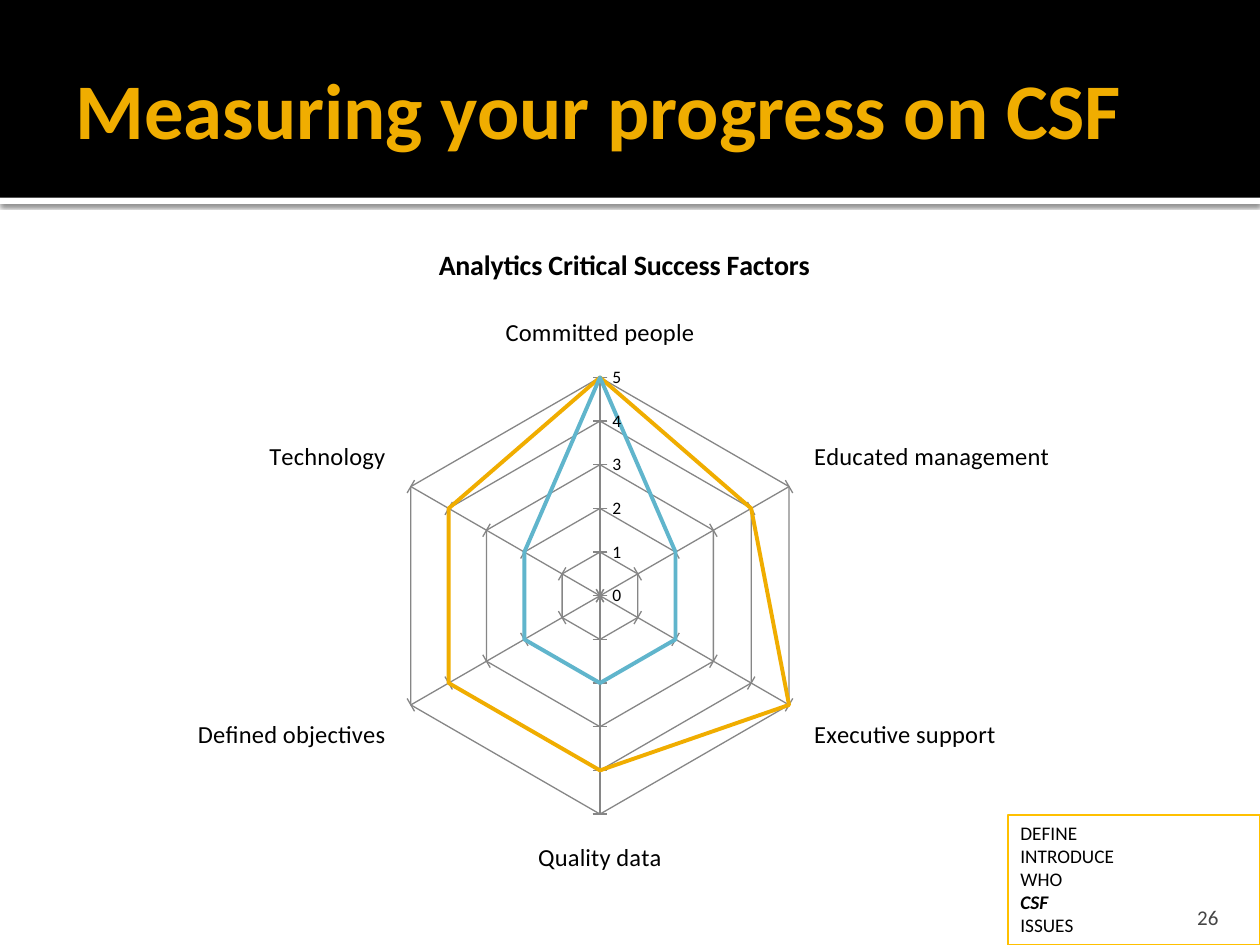
import pptx
import pptx.chart.data
import pptx.dml.color
import pptx.enum.chart
import pptx.enum.shapes
import pptx.enum.text
import pptx.oxml
import pptx.util

Pt = pptx.util.Pt
NS = 'xmlns:a="http://schemas.openxmlformats.org/drawingml/2006/main"'
NS_C = 'xmlns:c="http://schemas.openxmlformats.org/drawingml/2006/chart"'
FONT = "Calibri"
GOLD, BLUE, GREY = "F0AD00", "60B5CC", "868686"

TITLE = "Measuring your progress on CSF"
HEADING = "Analytics Critical Success Factors"
FACTORS = ["Committed people", "Educated management", "Executive support",
           "Quality data", "Defined objectives", "Technology"]
SERIES = [("Series 1", [5, 4, 5, 4, 4, 4], GOLD),
          ("Series 2", [5, 2, 2, 2, 2, 2], BLUE)]
STEPS = ["DEFINE", "INTRODUCE", "WHO", "CSF", "ISSUES"]
CURRENT = "CSF"
PAGE = "26"
PLOT = {"x": 0.25, "y": 0.23, "w": 0.45, "h": 0.64}


def color(code):
    return pptx.dml.color.RGBColor.from_string(code)


def style(font, size, code="000000", bold=False, italic=False):
    font.name, font.size = FONT, Pt(size)
    font.bold, font.italic = bold, italic
    font.color.rgb = color(code)


def place(box):
    return [Pt(v) for v in box]


def rect(slide, box, fill=None, line=None):
    shape = slide.shapes.add_shape(
        pptx.enum.shapes.MSO_SHAPE.RECTANGLE, *place(box))
    shape.shadow.inherit = False
    if fill:
        shape.fill.solid()
        shape.fill.fore_color.rgb = color(fill)
    else:
        shape.fill.background()
    if line:
        shape.line.color.rgb = color(line)
        shape.line.width = Pt(0.75)
    else:
        shape.line.fill.background()
    return shape


def write(shape, lines, anchor, align, insets):
    """Fill a shape with one paragraph per (text, style options) pair."""
    frame = shape.text_frame
    frame.word_wrap = True
    frame.vertical_anchor = anchor
    (frame.margin_left, frame.margin_top,
     frame.margin_right, frame.margin_bottom) = place(insets)
    for i, (text, look) in enumerate(lines):
        para = frame.add_paragraph() if i else frame.paragraphs[0]
        para.alignment = align
        run = para.add_run()
        run.text = text
        style(run.font, **look)


def cast(shape):
    """Give the shape a soft shadow straight below it."""
    effects = shape._element.spPr.find(pptx.oxml.ns.qn("a:effectLst"))
    effects.append(pptx.oxml.parse_xml(
        f'<a:outerShdw {NS} blurRad="{Pt(2.5)}" dist="{Pt(0.8)}" dir="5400000"'
        ' algn="tl" rotWithShape="0"><a:srgbClr val="000000">'
        '<a:alpha val="60000"/></a:srgbClr></a:outerShdw>'))


def radar(slide, box):
    data = pptx.chart.data.CategoryChartData()
    data.categories = FACTORS
    for name, values, _ in SERIES:
        data.add_series(name, values)
    chart = slide.shapes.add_chart(
        pptx.enum.chart.XL_CHART_TYPE.RADAR, *place(box), data).chart
    style(chart.font, 10)
    chart.has_legend = False
    chart.has_title = True
    run = chart.chart_title.text_frame.paragraphs[0].add_run()
    run.text = HEADING
    style(run.font, 16, bold=True)
    chart.chart_title.include_in_layout = False

    marks = pptx.enum.chart.XL_TICK_MARK
    cats, vals = chart.category_axis, chart.value_axis
    style(cats.tick_labels.font, 14)
    style(vals.tick_labels.font, 10)
    cats.major_tick_mark, vals.major_tick_mark = marks.OUTSIDE, marks.CROSS
    vals.minimum_scale, vals.maximum_scale, vals.major_unit = 0, 5, 1
    for axis in (cats, vals):
        axis.has_major_gridlines = True
        axis.minor_tick_mark = marks.NONE
        for line in (axis.format.line, axis.major_gridlines.format.line):
            line.color.rgb = color(GREY)
            line.width = Pt(0.75)

    plot = chart.plots[0]
    plot.vary_by_categories = False
    for series, (_, _, code) in zip(plot.series, SERIES):
        series.smooth = False
        series.format.line.color.rgb = color(code)
        series.format.line.width = Pt(2.25)
        series.marker.style = pptx.enum.chart.XL_MARKER_STYLE.NONE

    area = chart._chartSpace.chart.plotArea
    for old in area.findall(pptx.oxml.ns.qn("c:layout")):
        area.remove(old)
    sizes = "".join(f'<c:{k} val="{v}"/>' for k, v in PLOT.items())
    area.insert(0, pptx.oxml.parse_xml(
        f'<c:layout {NS_C}><c:manualLayout><c:layoutTarget val="inner"/>'
        '<c:xMode val="edge"/><c:yMode val="edge"/>'
        f'{sizes}</c:manualLayout></c:layout>'))


def main():
    deck = pptx.Presentation()
    deck.slide_width, deck.slide_height = Pt(720), Pt(540)
    slide = deck.slides.add_slide(deck.slide_layouts[6])
    anchor = pptx.enum.text.MSO_ANCHOR
    align = pptx.enum.text.PP_ALIGN

    cast(rect(slide, (0, 113, 720, 3.6), "FFFFFF"))
    rect(slide, (0, 0, 720, 113), "000000")
    title = slide.shapes.add_textbox(*place((36, 12.2, 648, 98.6)))
    write(title, [(TITLE, {"size": 45, "code": GOLD, "bold": True})],
          anchor.MIDDLE, align.LEFT, (7.2, 3.6, 3.6, 3.6))
    page = slide.shapes.add_textbox(*place((645.8, 509.8, 57.6, 21.6)))
    write(page, [(PAGE, {"size": 12, "code": "454545"})],
          anchor.BOTTOM, align.RIGHT, (7.2, 3.6, 7.2, 0))

    radar(slide, (77.8, 126, 558, 390))

    steps = rect(slide, (576, 465.8, 144, 74.2), line="FFC000")
    lines = [(s, {"size": 11, "bold": s == CURRENT, "italic": s == CURRENT})
             for s in STEPS]
    write(steps, lines, anchor.TOP, align.LEFT, (7.2, 3.6, 7.2, 3.6))
    steps.text_frame.auto_size = pptx.enum.text.MSO_AUTO_SIZE.SHAPE_TO_FIT_TEXT

    deck.save("out.pptx")


if __name__ == "__main__":
    main()
